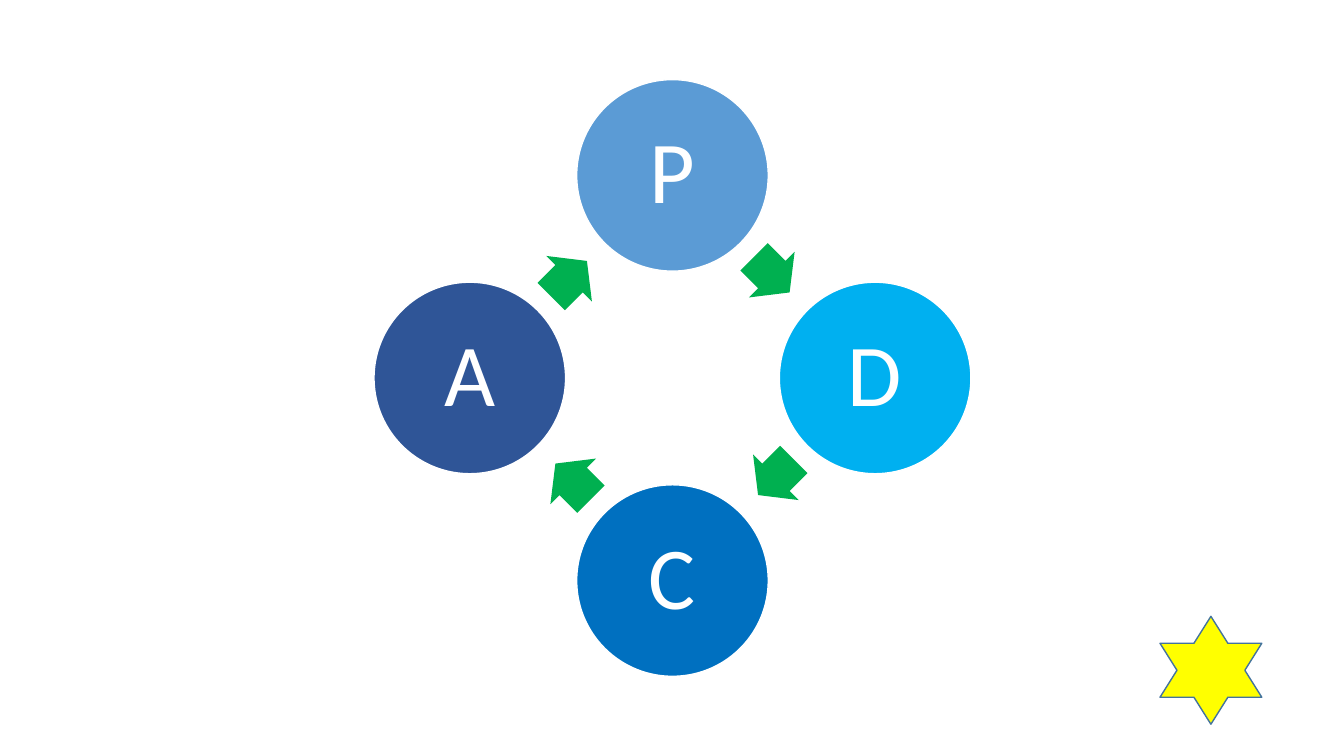
import math
from dataclasses import dataclass

import pptx
import pptx.dml.color
import pptx.enum.shapes
import pptx.enum.text
import pptx.util

Inches = pptx.util.Inches
Pt = pptx.util.Pt
Preset = pptx.enum.shapes.MSO_SHAPE

COLORS = {
    "plan": "5B9BD5",
    "do": "00B0F0",
    "check": "0070C0",
    "act": "2F5597",
    "arrow": "00B050",
    "star": "FFFF00",
    "star_line": "43739E",
    "white": "FFFFFF",
}

# Geometry of the cycle, in inches
CENTER_X, CENTER_Y = 6.67, 3.75
ORBIT = 2.01
DIAMETER = 1.9
ARROW_LENGTH, ARROW_WIDTH = 0.5, 0.64
ARROW_POSITION = 0.49  # share of the way from one stage to the next


@dataclass(frozen=True)
class Stage:
    letter: str
    color: str


STAGES = [Stage("P", "plan"), Stage("D", "do"), Stage("C", "check"), Stage("A", "act")]


def rgb(name: str) -> pptx.dml.color.RGBColor:
    return pptx.dml.color.RGBColor.from_string(COLORS[name])


def add_centered_shape(slide, preset, x: float, y: float, width: float, height: float,
                       fill: str, line: str | None = None):
    """Add a filled shape around the point (x, y)."""
    shape = slide.shapes.add_shape(preset, Inches(x - width / 2), Inches(y - height / 2),
                                   Inches(width), Inches(height))
    shape.shadow.inherit = False
    shape.fill.solid()
    shape.fill.fore_color.rgb = rgb(fill)
    if line:
        shape.line.color.rgb = rgb(line)
        shape.line.width = Pt(1)
    else:
        shape.line.fill.background()
    return shape


def stage_center(index: int) -> tuple[float, float]:
    """Stages run clockwise from the top, a quarter turn apart."""
    angle = math.radians(90 * index - 90)
    return CENTER_X + ORBIT * math.cos(angle), CENTER_Y + ORBIT * math.sin(angle)


def add_stage(slide, stage: Stage, index: int) -> None:
    x, y = stage_center(index)
    circle = add_centered_shape(slide, Preset.OVAL, x, y, DIAMETER, DIAMETER,
                                stage.color, "white")
    frame = circle.text_frame
    frame.margin_left = frame.margin_right = Inches(0.09)
    frame.margin_top = frame.margin_bottom = Inches(0.09)
    frame.vertical_anchor = pptx.enum.text.MSO_ANCHOR.MIDDLE
    paragraph = frame.paragraphs[0]
    paragraph.alignment = pptx.enum.text.PP_ALIGN.CENTER
    paragraph.line_spacing = 0.9
    paragraph.space_after = Pt(22)
    run = paragraph.add_run()
    run.text = stage.letter
    run.font.name = "Calibri"
    run.font.size = Pt(63)
    run.font.color.rgb = rgb("white")


def add_arrow(slide, index: int) -> None:
    start_x, start_y = stage_center(index)
    end_x, end_y = stage_center(index + 1)
    arrow = add_centered_shape(slide, Preset.RIGHT_ARROW,
                               start_x + ARROW_POSITION * (end_x - start_x),
                               start_y + ARROW_POSITION * (end_y - start_y),
                               ARROW_LENGTH, ARROW_WIDTH, "arrow")
    arrow.adjustments[0] = 0.6
    arrow.adjustments[1] = 0.5
    arrow.rotation = 45 + 90 * index


def main() -> None:
    presentation = pptx.Presentation()
    presentation.slide_width = Inches(13.33)
    presentation.slide_height = Inches(7.5)
    slide = presentation.slides.add_slide(presentation.slide_layouts[6])

    # Cycle of stages and arrows
    for index, stage in enumerate(STAGES):
        add_stage(slide, stage, index)
        add_arrow(slide, index)

    # Star in the corner
    add_centered_shape(slide, Preset.STAR_6_POINT, 12.01, 6.65, 1.01, 1.07,
                       "star", "star_line")

    presentation.save("out.pptx")


if __name__ == "__main__":
    main()
